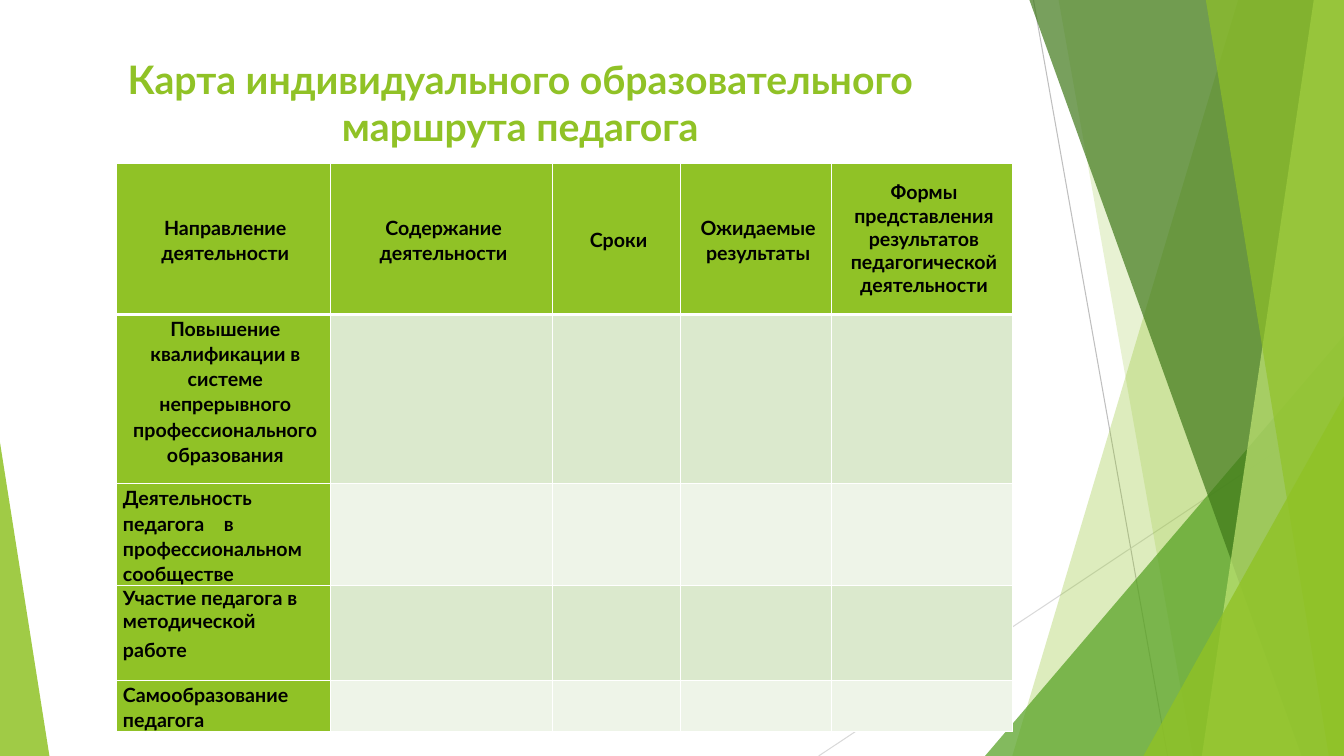
from lxml.etree import SubElement
from pptx import Presentation
from pptx.dml.color import RGBColor
from pptx.enum.shapes import MSO_CONNECTOR as CONN, MSO_SHAPE as SHAPE
from pptx.enum.text import MSO_ANCHOR as ANCHOR, PP_ALIGN as ALIGN
from pptx.oxml import parse_xml
from pptx.oxml.ns import nsdecls, qn
from pptx.util import Inches, Pt

COLORS = {
    "lime": "90C226", "pale_lime": "C0E474", "green": "54A021", "dark_green": "3F7819",
    "gray": "BFBFBF", "light_gray": "D9D9D9", "white": "FFFFFF", "black": "000000",
    "band_dark": "DBE9CD", "band_light": "EEF4E8",
}
W, H = 13.33, 7.5

HEADERS = [
    (["Направление деятельности"], 1.07),
    (["Содержание деятельности"], 1.07),
    (["Сроки"], 1.07),
    (["Ожидаемые", "результаты"], 1.07),
    (["Формы", "представления", "результатов", "педагогической", "деятельности"], 0.99),
]
DIRECTIONS = [
    [("Повышение квалификации в системе непрерывного профессионального образования", 1.07, 0)],
    [("Деятельность", 1.07, 0.2), ("педагога \tв профессиональном сообществе", 1.07, 0)],
    [("Участие педагога в методической", 0.99, 2.2), ("работе", 1.07, 0)],
    [("Самообразование педагога", 1.07, 0)],
]
COL_WIDTHS = [2.13, 2.2, 1.27, 1.5, 1.79]
ROW_HEIGHTS = [1.5, 1.68, 0.96, 0.94, 0.48]


class SlideBuilder:
    font = "Lato"

    def __init__(self, slide):
        self.slide = slide
        self.shapes = slide.shapes

    def rgb(self, color):
        return RGBColor.from_string(COLORS[color])

    def line(self, start, end, color, width=0.75):
        c = self.shapes.add_connector(CONN.STRAIGHT, *map(Inches, start + end))
        c.line.color.rgb = self.rgb(color)
        c.line.width = Pt(width)
        SubElement(c._element.spPr, qn("a:effectLst"))

    def paint(self, sp, color, opacity):
        sp.shadow.inherit = False
        sp.line.fill.background()
        sp.fill.solid()
        sp.fill.fore_color.rgb = self.rgb(color)
        clr = sp._element.spPr.find(".//" + qn("a:srgbClr"))
        SubElement(clr, qn("a:alpha"), val=str(opacity * 1000))

    def polygon(self, points, color, opacity):
        pts = [(Inches(x), Inches(y)) for x, y in points]
        fb = self.shapes.build_freeform(*pts[0], scale=1.0)
        fb.add_line_segments(pts[1:], close=True)
        self.paint(fb.convert_to_shape(), color, opacity)

    def triangle(self, box, apex, color, opacity):
        sp = self.shapes.add_shape(SHAPE.ISOSCELES_TRIANGLE, *map(Inches, box))
        sp.adjustments[0] = apex
        self.paint(sp, color, opacity)

    def set_text(self, p, text, size, color, align, spacing=1.0, after=0):
        p.text = text
        p.alignment = align
        p.line_spacing = spacing
        p.space_after = Pt(after)
        for r in p.runs:
            r.font.name = self.font
            r.font.size = Pt(size)
            r.font.bold = True
            r.font.color.rgb = self.rgb(color)

    def title(self, text, box):
        tf = self.shapes.add_textbox(*map(Inches, box)).text_frame
        tf.word_wrap = True
        tf.vertical_anchor = ANCHOR.MIDDLE
        self.set_text(tf.paragraphs[0], text, 28, "lime", ALIGN.CENTER)

    def fill_cell(self, cell, color, top=1, bottom=1):
        cell.fill.solid()
        cell.fill.fore_color.rgb = self.rgb(color)
        tc_pr = cell._tc.get_or_add_tcPr()
        for i, (side, width) in enumerate(zip("LRTB", (1, 1, top, bottom))):
            tc_pr.insert(i, parse_xml(
                f'<a:ln{side} {nsdecls("a")} w="{Pt(width)}"><a:solidFill>'
                f'<a:srgbClr val="{COLORS["white"]}"/></a:solidFill></a:ln{side}>'))

    def cell_text(self, cell, paragraphs, align, anchor):
        cell.margin_left, cell.margin_right = Inches(0.07), Inches(0.03)
        cell.margin_top, cell.margin_bottom = Inches(0.01), 0
        cell.vertical_anchor = anchor
        tf = cell.text_frame
        for i, (text, spacing, after) in enumerate(paragraphs):
            p = tf.add_paragraph() if i else tf.paragraphs[0]
            self.set_text(p, text, 14, "black", align, spacing, after)

    def table(self, left, top):
        size = sum(COL_WIDTHS), sum(ROW_HEIGHTS)
        frame = self.shapes.add_table(len(ROW_HEIGHTS), len(COL_WIDTHS),
                                      *map(Inches, (left, top) + size))
        table = frame.table
        table.first_row = table.horz_banding = False
        for col, width in zip(table.columns, COL_WIDTHS):
            col.width = Inches(width)
        for row, height in zip(table.rows, ROW_HEIGHTS):
            row.height = Inches(height)
        for c, (lines, spacing) in enumerate(HEADERS):
            cell = table.cell(0, c)
            self.fill_cell(cell, "lime", bottom=3)
            self.cell_text(cell, [(line, spacing, 0) for line in lines],
                           ALIGN.CENTER, ANCHOR.MIDDLE)
        for r, paragraphs in enumerate(DIRECTIONS, 1):
            band = "band_dark" if r % 2 else "band_light"
            for c in range(len(COL_WIDTHS)):
                self.fill_cell(table.cell(r, c), band if c else "lime", top=3 if r == 1 else 1)
            align = ALIGN.CENTER if r == 1 else ALIGN.LEFT
            self.cell_text(table.cell(r, 0), paragraphs, align, ANCHOR.TOP)


def main():
    prs = Presentation()
    prs.slide_width, prs.slide_height = Inches(W), Inches(H)
    b = SlideBuilder(prs.slides.add_slide(prs.slide_layouts[6]))

    b.line((10.25, 0), (11.58, H), "gray")
    b.line((W, 4.03), (8.12, H), "light_gray")

    def band(top_x, bottom_x, color, opacity):
        b.polygon([(top_x, 0), (W, 0), (W, H), (bottom_x, H)], color, opacity)

    band(12.28, 10.04, "lime", 30)
    band(10.5, 11.83, "lime", 20)
    b.triangle((9.77, 3.33, 3.56, 4.17), 1, "green", 72)
    band(10.21, 12.91, "dark_green", 70)
    band(13.03, 11.92, "pale_lime", 70)
    band(11.96, 13.18, "lime", 65)
    b.triangle((11.34, 3.93, 1.99, 3.57), 1, "lime", 80)
    b.triangle((0, 4.39, 0.49, 3.11), 0, "lime", 85)

    b.table(1.15, 1.62)
    b.title("Карта индивидуального образовательного маршрута педагога", (0.74, 0.5, 8.84, 1.04))
    prs.save("out.pptx")


if __name__ == "__main__":
    main()
